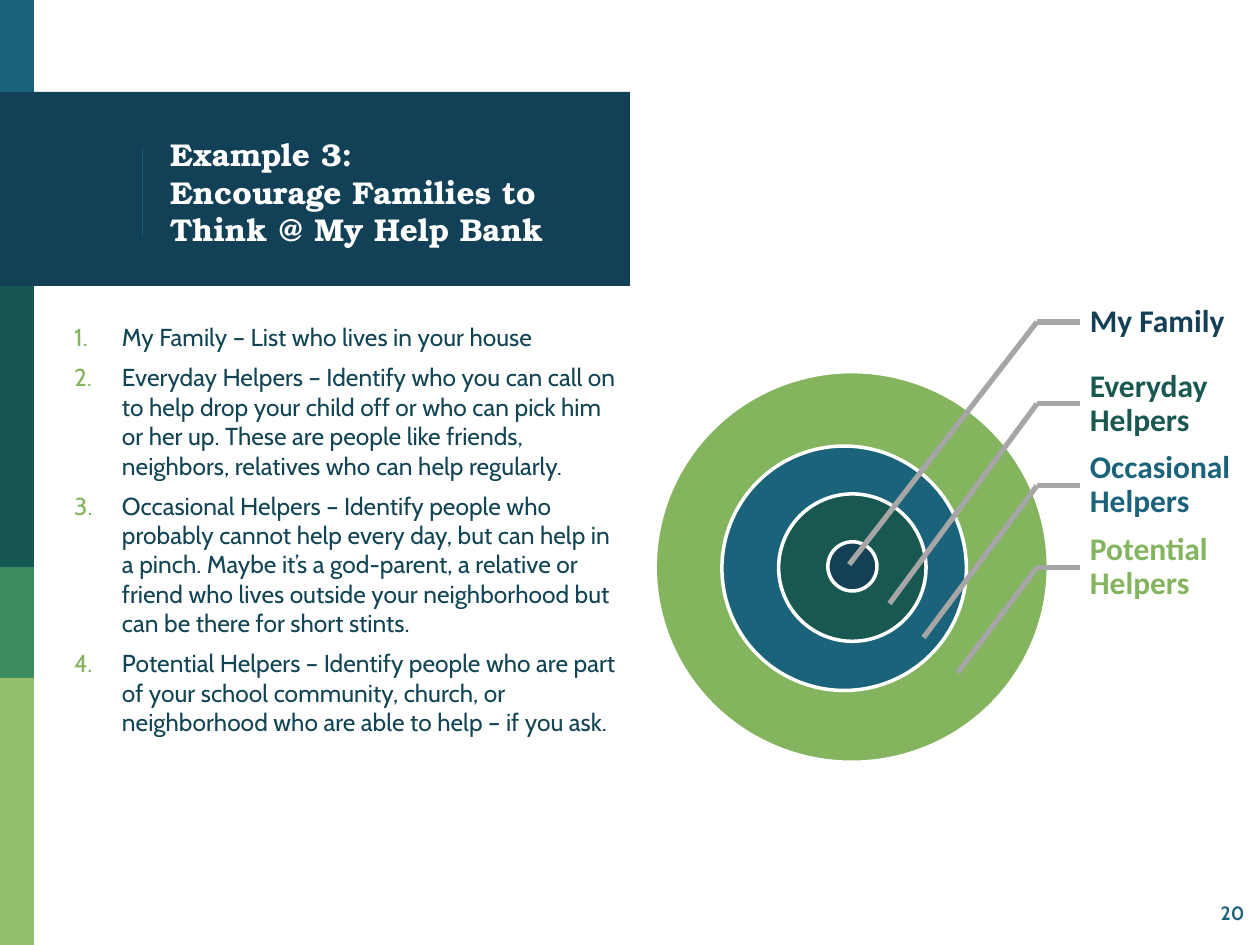
from pptx import Presentation, util as u
from pptx.dml.color import RGBColor
from pptx.enum import shapes, text
from pptx.oxml.xmlchemy import OxmlElement

# Content
TITLE = "Example 3:\vEncourage Families to Think @ My Help Bank"
STEPS = [
    "My Family – List who lives in your house",
    "Everyday Helpers – Identify who you can call on to help drop your child "
    "off or who can pick him or her up. These are people like friends, "
    "neighbors, relatives who can help regularly.",
    "Occasional Helpers – Identify people who probably cannot help every day, "
    "but can help in a pinch. Maybe it’s a god-parent, a relative or friend who "
    "lives outside your neighborhood but can be there for short stints.",
    "Potential Helpers – Identify people who are part of your school community, "
    "church, or neighborhood who are able to help – if you ask.",
]
# Inner to outer: label, colour, ring box, end of its leader
RINGS = [
    ("My Family", "navy", (6.57, 4.3, 0.39, 0.39), (6.74, 4.48)),
    ("Everyday Helpers", "pine", (6.18, 3.92, 1.17, 1.17), (7.06, 4.79)),
    ("Occasional Helpers", "blue", (5.73, 3.54, 1.94, 1.94), (7.33, 5.06)),
    ("Potential Helpers", "leaf", (5.2, 2.95, 3.12, 3.1), (7.6, 5.34)),
]
# Side stripe: colour, top, bottom
STRIPES = [
    ("18637B", 0, 0.77),
    ("165751", 2.27, 4.5),
    ("3B8D61", 4.5, 5.38),
    ("94BF6E", 5.38, 7.5),
]
PAGE = "20"


class Theme:
    navy, pine, blue, leaf = "144056", "195751", "1B637A", "84B45E"
    band, rule, white, gray, ink = "124057", "18637B", "FFFFFF", "A6A6A6", "114454"
    head, body, label = "TeX Gyre Bonum", "Cabin", "Calibri"
    big, mid, small = 18, 14, 11


# Grid
WIDE, HIGH = 10, 7.5
SIDE = 0.27
BEND, STUB = 8.23, 0.34
LEFT, TOP, ROW = 8.51, 2.23, 0.65

deck = Presentation()
deck.slide_width, deck.slide_height = u.Inches(WIDE), u.Inches(HIGH)
slide = deck.slides.add_slide(deck.slide_layouts[5])


def inch(nums):
    return [u.Inches(n) for n in nums]


def put(obj, vals):
    for key, val in vals.items():
        setattr(obj, key, val)


def draw(kind, box, fill, line=None):
    item = slide.shapes.add_shape(kind, *inch(box))
    item.shadow.inherit = False
    item.fill.solid()
    item.fill.fore_color.rgb = RGBColor.from_string(fill)
    if line:
        item.line.color.rgb = RGBColor.from_string(line)
        item.line.width = u.Pt(2)
    else:
        item.line.fill.background()


def link(start, end, color, width):
    item = slide.shapes.add_connector(
        shapes.MSO_CONNECTOR.STRAIGHT, *inch(start + end))
    item.line.color.rgb = RGBColor.from_string(color)
    item.line.width = u.Pt(width)
    item._element.spPr.append(OxmlElement("a:effectLst"))


def write(item, box, lines, font, size, color, bold=True, pads=(0.1,) * 4,
          anchor=text.MSO_ANCHOR.TOP, **para):
    put(item, dict(zip(("left", "top", "width", "height"), inch(box))))
    frame = item.text_frame
    names = ("margin_left", "margin_top", "margin_right", "margin_bottom")
    put(frame, dict(zip(names, inch(pads)), word_wrap=True,
                    auto_size=text.MSO_AUTO_SIZE.NONE, vertical_anchor=anchor))
    frame.text = "\n".join(lines)
    for par in frame.paragraphs:
        put(par, dict(para, alignment=text.PP_ALIGN.LEFT))
        for run in par.runs:
            put(run.font, dict(name=font, size=u.Pt(size), bold=bold))
            run.font.color.rgb = RGBColor.from_string(color)
    return frame


def number(par, color, gap):
    props = par._p.get_or_add_pPr()
    props.set("marL", str(u.Inches(gap)))
    props.set("indent", str(-u.Inches(gap)))
    tint, hue = OxmlElement("a:buClr"), OxmlElement("a:srgbClr")
    hue.set("val", color)
    tint.append(hue)
    auto = OxmlElement("a:buAutoNum")
    auto.set("type", "arabicPeriod")
    props.append(tint)
    props.append(auto)


def add_box():
    return slide.shapes.add_textbox(0, 0, 0, 0)


# Side stripe and title band
RECT = shapes.MSO_SHAPE.RECTANGLE
for fill, top, end in STRIPES:
    draw(RECT, (0, top, SIDE, end - top), fill)
draw(RECT, (0, 0.73, WIDE / 2, 1.54), Theme.band)
link((1.13, 1.18), (1.13, 1.87), Theme.rule, 0.75)

# Title, raised above the band
title = slide.shapes.title
write(title, (1.25, 0.77, 3.51, 1.5), [TITLE], Theme.head, Theme.big,
      Theme.white, anchor=text.MSO_ANCHOR.MIDDLE)
slide.shapes._spTree.append(title._element)

# Rings, outer first
for name, tone, box, tip in reversed(RINGS):
    draw(shapes.MSO_SHAPE.OVAL, box, getattr(Theme, tone), Theme.white)

# Labels and leaders
for row, (name, tone, box, tip) in enumerate(RINGS):
    top = TOP + row * ROW
    mid = top + ROW / 2
    write(add_box(), (LEFT, top, 1.36, ROW), [name], Theme.label, Theme.big,
          getattr(Theme, tone), pads=(0.14, 0.03, 0.03, 0.03),
          anchor=text.MSO_ANCHOR.MIDDLE, line_spacing=0.9)
    link((BEND, mid), (BEND + STUB, mid), Theme.gray, 3)
    link((BEND, mid), tip, Theme.gray, 3)

# Numbered steps
steps = write(add_box(), (0.49, 2.46, 4.53, 3.5), STEPS, Theme.body, Theme.mid,
              Theme.ink, bold=False, space_before=u.Pt(6))
for par in steps.paragraphs:
    number(par, Theme.leaf, 0.38)

# Page number
write(add_box(), (9.59, 7.1, 0.5, 0.29), [PAGE], Theme.body, Theme.small,
      Theme.blue, pads=(0.1, 0.05, 0.1, 0.05))

deck.save("out.pptx")
